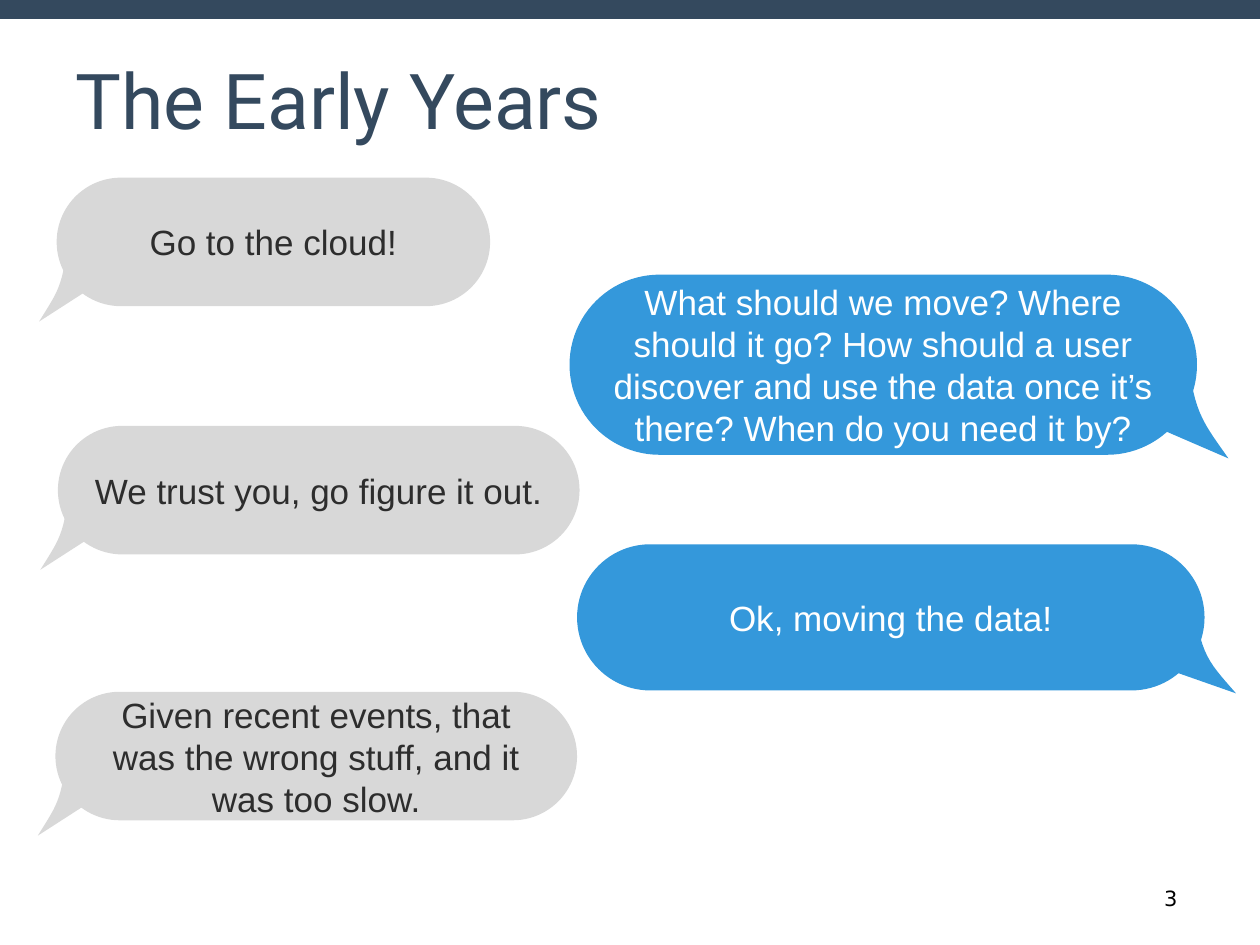
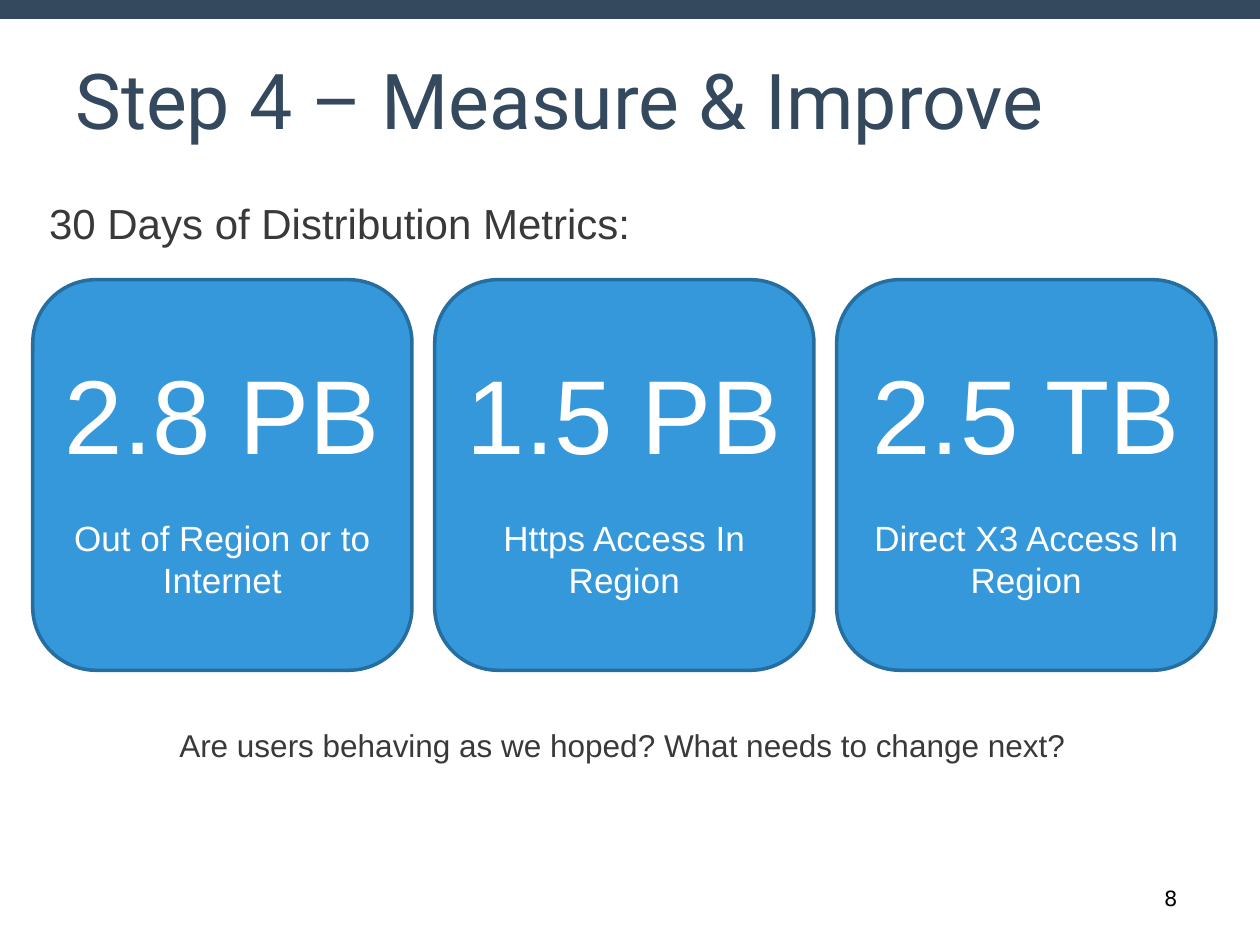
from dataclasses import dataclass

from pptx import Presentation
from pptx.dml.color import RGBColor
from pptx.enum import shapes, text
from pptx.util import Inches, Pt


@dataclass(frozen=True)
class Theme:
    navy: str = "34495E"
    blue: str = "3498DB"
    blue_edge: str = "256E9F"
    gray: str = "D8D8D8"
    bubble_ink: str = "2D2D2D"
    body_ink: str = "393939"
    white: str = "FFFFFF"
    black: str = "000000"
    title_font: str = "Roboto"
    body_font: str = "Arial"
    number_font: str = "DejaVu Sans"
    title_size: int = 44
    figure_size: int = 60
    lead_size: int = 24
    text_size: int = 20
    question_size: int = 18
    number_size: int = 12


THEME = Theme()

# Tail outline: start, tip, two curve controls, end. x is in inches from the
# bubble's lower corner, y is a share of the bubble's height.
LEFT_TAIL = [(0.24, -0.12), (-0.14, 0.12), (-0.02, -0.07), (0.04, -0.14), (0.07, -0.38)]
RIGHT_TAIL = [(-0.28, -0.14), (0.25, 0.02), (0.07, -0.16), (-0.01, -0.22), (-0.06, -0.47)]

BUBBLES = [
    # side, box, words
    ("left", (0.45, 1.41, 3.44, 1.02), "Go to the cloud!"),
    ("right", (4.52, 2.18, 4.98, 1.43),
     "What should we move? Where should it go? How should a user discover "
     "and use the data once it’s there? When do you need it by?"),
    ("left", (0.46, 3.38, 4.14, 1.02), "We trust you, go figure it out."),
    ("right", (4.58, 4.32, 4.98, 1.16), "Ok, moving the data!"),
    ("left", (0.44, 5.49, 4.14, 1.02),
     "Given recent events, that was the wrong stuff, and it was too slow."),
]

METRICS = [
    ("2.8 PB", "Out of Region or to Internet"),
    ("1.5 PB", "Https Access In Region"),
    ("2.5 TB", "Direct X3 Access In Region"),
]


def paint(shape, fill, edge=None):
    shape.shadow.inherit = False
    shape.fill.solid()
    shape.fill.fore_color.rgb = RGBColor.from_string(fill)
    if edge:
        shape.line.color.rgb = RGBColor.from_string(edge)
        shape.line.width = Pt(2)
    else:
        shape.line.fill.background()


def style(paragraph, size, color, font=THEME.body_font, align=text.PP_ALIGN.LEFT):
    paragraph.alignment = align
    paragraph.font.size = Pt(size)
    paragraph.font.name = font
    paragraph.font.color.rgb = RGBColor.from_string(color)


def add_box(slide, kind, box, fill, edge=None, corner=None):
    shape = slide.shapes.add_shape(kind, *map(Inches, box))
    paint(shape, fill, edge)
    if corner is not None:
        shape.adjustments[0] = corner
    shape.text_frame.word_wrap = True
    shape.text_frame.vertical_anchor = text.MSO_ANCHOR.MIDDLE
    return shape


def add_label(slide, box, words, size, color, insets=(0.1, 0.1, 0.1, 0.1),
              anchor=text.MSO_ANCHOR.TOP, **paragraph_style):
    """Add a one-paragraph text box; insets run left, top, right, bottom."""
    frame = slide.shapes.add_textbox(*map(Inches, box)).text_frame
    frame.word_wrap = True
    frame.vertical_anchor = anchor
    (frame.margin_left, frame.margin_top,
     frame.margin_right, frame.margin_bottom) = map(Inches, insets)
    frame.text = words
    style(frame.paragraphs[0], size, color, **paragraph_style)


def add_base_slide(presentation, title, number):
    """Add a slide with the top band, title and page number."""
    slide = presentation.slides.add_slide(presentation.slide_layouts[6])
    add_box(slide, shapes.MSO_SHAPE.RECTANGLE, (0, 0, 10, 0.15), THEME.navy)
    add_label(slide, (9.14, 6.98, 0.58, 0.3), str(number), THEME.number_size,
              THEME.black, insets=(0.1, 0.05, 0.1, 0.05), font=THEME.number_font)
    add_label(slide, (0.5, 0.3, 9, 0.96), title, THEME.title_size, THEME.navy,
              anchor=text.MSO_ANCHOR.MIDDLE, font=THEME.title_font)
    return slide


def curve(points, steps=12):
    """Return points along a cubic curve, without its start."""
    def at(t, axis):
        weights = ((1 - t) ** 3, 3 * t * (1 - t) ** 2, 3 * t * t * (1 - t), t ** 3)
        return sum(w * point[axis] for w, point in zip(weights, points))
    return [(at(i / steps, 0), at(i / steps, 1)) for i in range(1, steps + 1)]


def add_tail(slide, corner_x, bottom, height, outline, fill):
    start, tip = outline[:2]
    points = [(Inches(corner_x + x), Inches(bottom + y * height))
              for x, y in [start, tip] + curve(outline[1:])]
    builder = slide.shapes.build_freeform(*points[0])
    builder.add_line_segments(points[1:], close=True)
    paint(builder.convert_to_shape(), fill)


def add_bubble(slide, side, box, words):
    left, top, width, height = box
    if side == "left":
        fill, ink, outline, corner_x = THEME.gray, THEME.bubble_ink, LEFT_TAIL, left
    else:
        fill, ink, outline, corner_x = THEME.blue, THEME.white, RIGHT_TAIL, left + width
    add_tail(slide, corner_x, top + height, height, outline, fill)
    bubble = add_box(slide, shapes.MSO_SHAPE.ROUNDED_RECTANGLE, box, fill, corner=0.5)
    bubble.text_frame.text = words
    style(bubble.text_frame.paragraphs[0], THEME.text_size, ink,
          align=text.PP_ALIGN.CENTER)


def add_metric_cards(slide, box, gap):
    left, top, width, height = box
    card_width = (width - gap * (len(METRICS) - 1)) / len(METRICS)
    for index, (figure, caption) in enumerate(METRICS):
        card_box = (left + index * (card_width + gap), top, card_width, height)
        card = add_box(slide, shapes.MSO_SHAPE.ROUNDED_RECTANGLE, card_box,
                       THEME.blue, THEME.blue_edge, corner=0.167)
        frame = card.text_frame
        frame.text = figure
        style(frame.paragraphs[0], THEME.figure_size, THEME.white,
              align=text.PP_ALIGN.CENTER)
        paragraph = frame.add_paragraph()
        paragraph.text = caption
        paragraph.space_before = Pt(23)
        style(paragraph, THEME.text_size, THEME.white, align=text.PP_ALIGN.CENTER)


def build_conversation(presentation):
    slide = add_base_slide(presentation, "The Early Years", 3)
    for side, box, words in BUBBLES:
        add_bubble(slide, side, box, words)


def build_metrics(presentation):
    slide = add_base_slide(presentation, "Step 4 – Measure & Improve", 8)
    add_metric_cards(slide, (0.26, 2.22, 9.39, 3.1), gap=0.18)
    add_label(slide, (0.26, 1.47, 9, 0.8), "30 Days of Distribution Metrics:",
              THEME.lead_size, THEME.body_ink, insets=(0.13, 0.1, 0.1, 0.1))
    add_label(slide, (0.5, 5.66, 9, 0.8),
              "Are users behaving as we hoped? What needs to change next?",
              THEME.question_size, THEME.body_ink, insets=(0.1, 0.1, 0.22, 0.1),
              align=text.PP_ALIGN.CENTER)


def main():
    presentation = Presentation()
    presentation.slide_width = Inches(10)
    presentation.slide_height = Inches(7.5)
    build_conversation(presentation)
    build_metrics(presentation)
    presentation.save("out.pptx")


if __name__ == "__main__":
    main()
